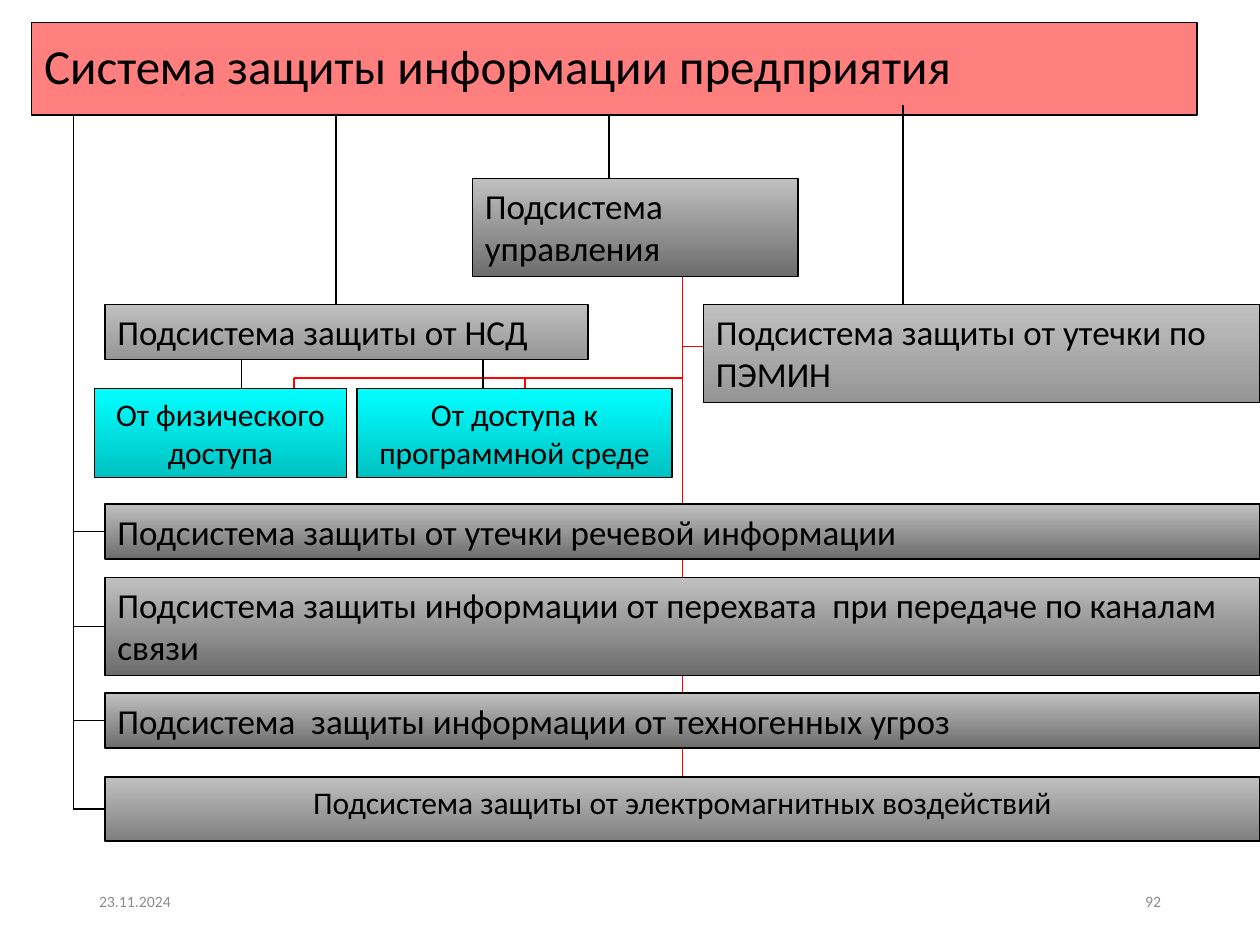
from collections import namedtuple
from lxml.etree import SubElement
from pptx import Presentation
from pptx.dml.color import RGBColor
from pptx.enum.shapes import MSO_CONNECTOR, MSO_SHAPE
from pptx.enum.text import MSO_ANCHOR, PP_ALIGN
from pptx.oxml.ns import qn
from pptx.util import Inches, Pt

COLORS = {
    "ink": "000000", "control": "FF0000", "header": "FF0000", "footer": "8C8C8C",
    "silver": "C0C0C0", "graphite": "6C6C6C", "ash": "959595", "steel": "7F7F7F",
    "cyan": "00FFFF", "teal": "00C2C2",
}
FONT = "Calibri"
COLUMNS, ROWS = 120, 90
SLIDE_WIDTH, SLIDE_HEIGHT = Inches(10), Inches(7.5)
ONE_LINE, TWO_LINES = 5.25, 9.35

Area = namedtuple("Area", "left top width height")


def color(name):
    return RGBColor.from_string(COLORS[name])


def across(columns):
    return round(SLIDE_WIDTH * columns / COLUMNS)


def down(rows):
    return round(SLIDE_HEIGHT * rows / ROWS)


def place(area):
    return across(area.left), down(area.top), across(area.width), down(area.height)


def write(frame, text, size, ink="ink", align=PP_ALIGN.LEFT, anchor=MSO_ANCHOR.TOP):
    frame.word_wrap = True
    frame.vertical_anchor = anchor
    paragraph = frame.paragraphs[0]
    paragraph.alignment = align
    run = paragraph.add_run()
    run.text = text
    run.font.name = FONT
    run.font.size = Pt(size)
    run.font.color.rgb = color(ink)
    return paragraph


def outline(line, ink="ink"):
    line.color.rgb = color(ink)
    line.width = Pt(0.75)


def add_block(slide, area, text, size=20, shades=("silver", "graphite"), align=PP_ALIGN.LEFT):
    block = slide.shapes.add_shape(MSO_SHAPE.RECTANGLE, *place(area))
    block.shadow.inherit = False
    block.fill.gradient()
    block.fill.gradient_angle = 270
    for stop, shade in zip(block.fill.gradient_stops, shades):
        stop.color.rgb = color(shade)
    outline(block.line)
    write(block.text_frame, text, size, align=align)
    return block


def add_link(slide, start, end, ink="ink"):
    link = slide.shapes.add_connector(
        MSO_CONNECTOR.STRAIGHT,
        across(start[0]), down(start[1]), across(end[0]), down(end[1]))
    outline(link.line, ink)
    SubElement(link._element.spPr, qn("a:effectLst"))
    return link


def add_header(slide, area):
    title = slide.shapes.title
    title.left, title.top, title.width, title.height = place(area)
    title.fill.solid()
    title.fill.fore_color.rgb = color("header")
    tint = title._element.spPr.find(qn("a:solidFill"))[0]
    SubElement(tint, qn("a:alpha"), val="50000")
    outline(title.line)
    heading = write(title.text_frame, "Система защиты информации предприятия", 28,
                    anchor=MSO_ANCHOR.MIDDLE)
    heading.line_spacing = 0.9


def add_footer(slide, area):
    width = 27
    items = [("23.11.2024", area.left, PP_ALIGN.LEFT),
             ("92", area.left + area.width - width, PP_ALIGN.RIGHT)]
    for text, left, align in items:
        note = slide.shapes.add_textbox(*place(Area(left, area.top, width, area.height)))
        write(note.text_frame, text, 9, "footer", align, MSO_ANCHOR.MIDDLE)


def add_control_lines(slide, area):
    trunk = area.left + area.width
    bus = area.top + 10
    add_link(slide, (trunk, area.top), (trunk, area.top + area.height), "control")
    add_link(slide, (trunk, bus - 3), (trunk + 3, bus - 3), "control")
    add_link(slide, (area.left, bus), (trunk, bus), "control")
    for offset, length in ((0, 4), (22, 3)):
        drop = area.left + offset
        add_link(slide, (drop, bus), (drop, bus + length), "control")


def add_management(slide, area):
    add_block(slide, area, "Подсистема управления")
    stem = area.left + 13
    add_link(slide, (stem, area.top - 6), (stem, area.top))


def add_access_branch(slide, area):
    stem = area.left + 23
    add_link(slide, (stem, area.top - 18), (stem, area.top))
    children_top = area.top + 8
    for offset in (14, 37):
        stub = area.left + offset
        add_link(slide, (stub, area.top + 4.5), (stub, children_top))
    add_block(slide, Area(area.left + 1, area.top, 46, ONE_LINE),
              "Подсистема защиты от НСД", shades=("silver", "ash"))
    children = [("От физического доступа", 0, 24),
                ("От доступа к программной среде", 25, 30)]
    for text, offset, width in children:
        add_block(slide, Area(area.left + offset, children_top, width, area.height - 8),
                  text, 18, ("cyan", "teal"), PP_ALIGN.CENTER)


def add_emission_branch(slide, area):
    stem = area.left + 19
    add_link(slide, (stem, area.top - 19), (stem, area.top))
    add_block(slide, area, "Подсистема защиты от утечки по ПЭМИН", shades=("silver", "ash"))


def add_threat_stack(slide, area):
    spine, indent = area.left, 3
    plain = dict()
    centered = dict(size=18, shades=("silver", "steel"), align=PP_ALIGN.CENTER)
    threats = [
        ("Подсистема защиты от утечки речевой информации", 0, ONE_LINE, plain),
        ("Подсистема защиты информации от перехвата  при передаче по каналам связи",
         7, TWO_LINES, plain),
        ("Подсистема  защиты информации от техногенных угроз", 18, ONE_LINE, plain),
        ("Подсистема защиты от электромагнитных воздействий", 26, 6.1, centered),
    ]
    for text, offset, height, style in threats:
        top = area.top + offset
        middle = top + height / 2
        block = add_block(slide, Area(spine + indent, top, area.width - indent, height),
                          text, **style)
        branch = add_link(slide, (spine, middle), (spine + indent, middle))
        branch.end_connect(block, 1)
    add_link(slide, (spine, area.top - 37), (spine, middle))


def main():
    deck = Presentation()
    deck.slide_width, deck.slide_height = SLIDE_WIDTH, SLIDE_HEIGHT
    slide = deck.slides.add_slide(deck.slide_layouts[5])
    add_header(slide, Area(3, 2.16, 111, 8.8))
    add_footer(slide, Area(8.25, 83.4, 103.5, 4.8))
    add_control_lines(slide, Area(28, 26, 37, 48))
    add_management(slide, Area(45, 17, 31, TWO_LINES))
    add_access_branch(slide, Area(9, 29, 55, 16.5))
    add_emission_branch(slide, Area(67, 29, 53, TWO_LINES))
    add_threat_stack(slide, Area(7, 48, 113, 32.1))
    deck.save("out.pptx")


if __name__ == "__main__":
    main()
